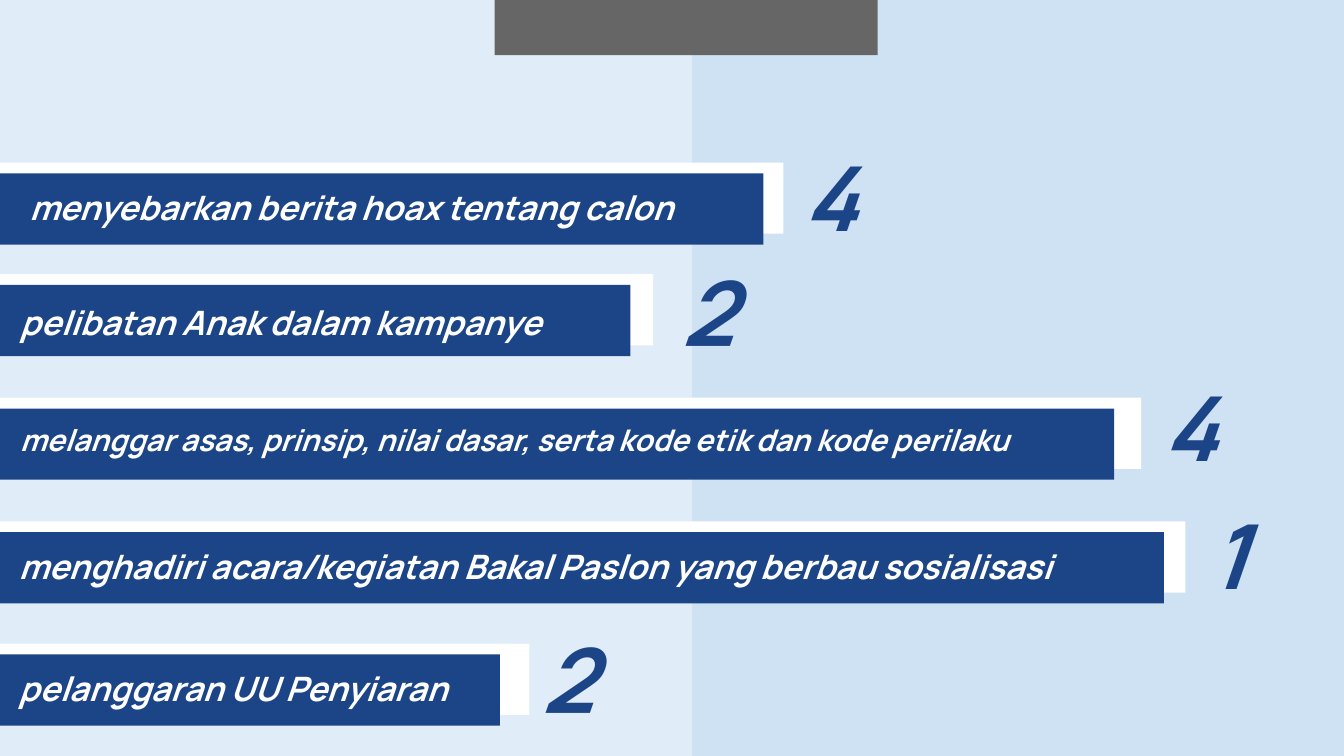
"""Build a slide of campaign violations as labelled bars with their counts."""
from dataclasses import dataclass

from lxml import etree
from pptx import Presentation
from pptx.dml.color import RGBColor
from pptx.enum import shapes, text
from pptx.oxml.ns import qn
from pptx.util import Inches, Pt


@dataclass(frozen=True)
class Theme:
    font: str = "Manrope"
    background: str = "CFE2F3"
    white: str = "FFFFFF"
    navy: str = "1C4587"
    grey: str = "666666"
    label_size: int = 18
    long_label_size: int = 16
    count_size: int = 48


@dataclass(frozen=True)
class Violation:
    label: str
    count: int
    top: float
    bar_width: float
    backing_width: float
    label_left: float
    label_top: float
    count_left: float
    count_top: float
    count_width: float
    label_size: int


THEME = Theme()
SLIDE_WIDTH = 10
SLIDE_HEIGHT = SLIDE_WIDTH * 9 / 16
BAR_HEIGHT = 0.53
BACKING_RISE = 0.08
COUNT_HEIGHT = 0.94

VIOLATIONS = [
    Violation("menyebarkan berita hoax tentang calon", 4, 1.29, 5.68, 5.83,
              0.12, 1.29, 5.88, 0.96, 1.28, THEME.label_size),
    Violation("pelibatan Anak dalam kampanye", 2, 2.12, 4.69, 4.86,
              0.05, 2.15, 4.97, 1.81, 1.96, THEME.label_size),
    Violation("melanggar asas, prinsip, nilai dasar, serta kode etik dan kode perilaku",
              4, 3.04, 8.29, 8.49,
              0.05, 3.04, 8.56, 2.67, 1.13, THEME.long_label_size),
    Violation("menghadiri acara/kegiatan Bakal Paslon yang berbau sosialisasi",
              1, 3.96, 8.66, 8.82,
              0.04, 3.96, 8.89, 3.62, 1.11, THEME.label_size),
    Violation("pelanggaran UU Penyiaran", 2, 4.87, 3.72, 3.94,
              0.04, 4.87, 3.93, 4.54, 1.06, THEME.label_size),
]


def add_block(slide, left: float, top: float, width: float, height: float,
              color: str, opacity: int = 100) -> None:
    """Draw a borderless rectangle with an opacity in percent."""
    block = slide.shapes.add_shape(shapes.MSO_SHAPE.RECTANGLE, Inches(left),
                                   Inches(top), Inches(width), Inches(height))
    block.shadow.inherit = False
    block.fill.solid()
    block.fill.fore_color.rgb = RGBColor.from_string(color)
    block.line.fill.background()
    if opacity < 100:
        fill_color = block.fill._xPr.find(qn("a:solidFill"))[0]
        etree.SubElement(fill_color, qn("a:alpha")).set("val", str(opacity * 1000))


def add_text(slide, wording: str, *, left: float, top: float, width: float,
             height: float, size: int, color: str) -> None:
    """Write one line of bold italic text."""
    box = slide.shapes.add_textbox(Inches(left), Inches(top),
                                   Inches(width), Inches(height))
    frame = box.text_frame
    frame.word_wrap = True
    frame.vertical_anchor = text.MSO_ANCHOR.TOP
    frame.margin_left = frame.margin_right = Inches(0.1)
    frame.margin_top = frame.margin_bottom = Inches(0.1)
    run = frame.paragraphs[0].add_run()
    run.text = wording
    run.font.name = THEME.font
    run.font.size = Pt(size)
    run.font.bold = run.font.italic = True
    run.font.color.rgb = RGBColor.from_string(color)


def add_bar(slide, violation: Violation) -> None:
    """Draw the bar of a violation over its white backing."""
    add_block(slide, 0, violation.top - BACKING_RISE, violation.backing_width,
              BAR_HEIGHT, THEME.white)
    add_block(slide, 0, violation.top, violation.bar_width, BAR_HEIGHT, THEME.navy)


def add_wording(slide, violation: Violation) -> None:
    """Write the label and the count of a violation."""
    add_text(slide, violation.label, left=violation.label_left,
             top=violation.label_top, width=violation.bar_width - violation.label_left,
             height=BAR_HEIGHT, size=violation.label_size, color=THEME.white)
    add_text(slide, str(violation.count), left=violation.count_left,
             top=violation.count_top, width=violation.count_width,
             height=COUNT_HEIGHT, size=THEME.count_size, color=THEME.navy)


def main() -> None:
    """Build and save the slide."""
    deck = Presentation()
    deck.slide_width, deck.slide_height = Inches(SLIDE_WIDTH), Inches(SLIDE_HEIGHT)
    slide = deck.slides.add_slide(deck.slide_layouts[6])
    slide.background.fill.solid()
    slide.background.fill.fore_color.rgb = RGBColor.from_string(THEME.background)
    add_block(slide, 0, 0, 5.15, SLIDE_HEIGHT, THEME.white, opacity=37)
    add_block(slide, 3.68, 0, 2.85, 0.41, THEME.grey)
    for violation in VIOLATIONS:
        add_bar(slide, violation)
    for violation in VIOLATIONS:
        add_wording(slide, violation)
    deck.save("out.pptx")


if __name__ == "__main__":
    main()
